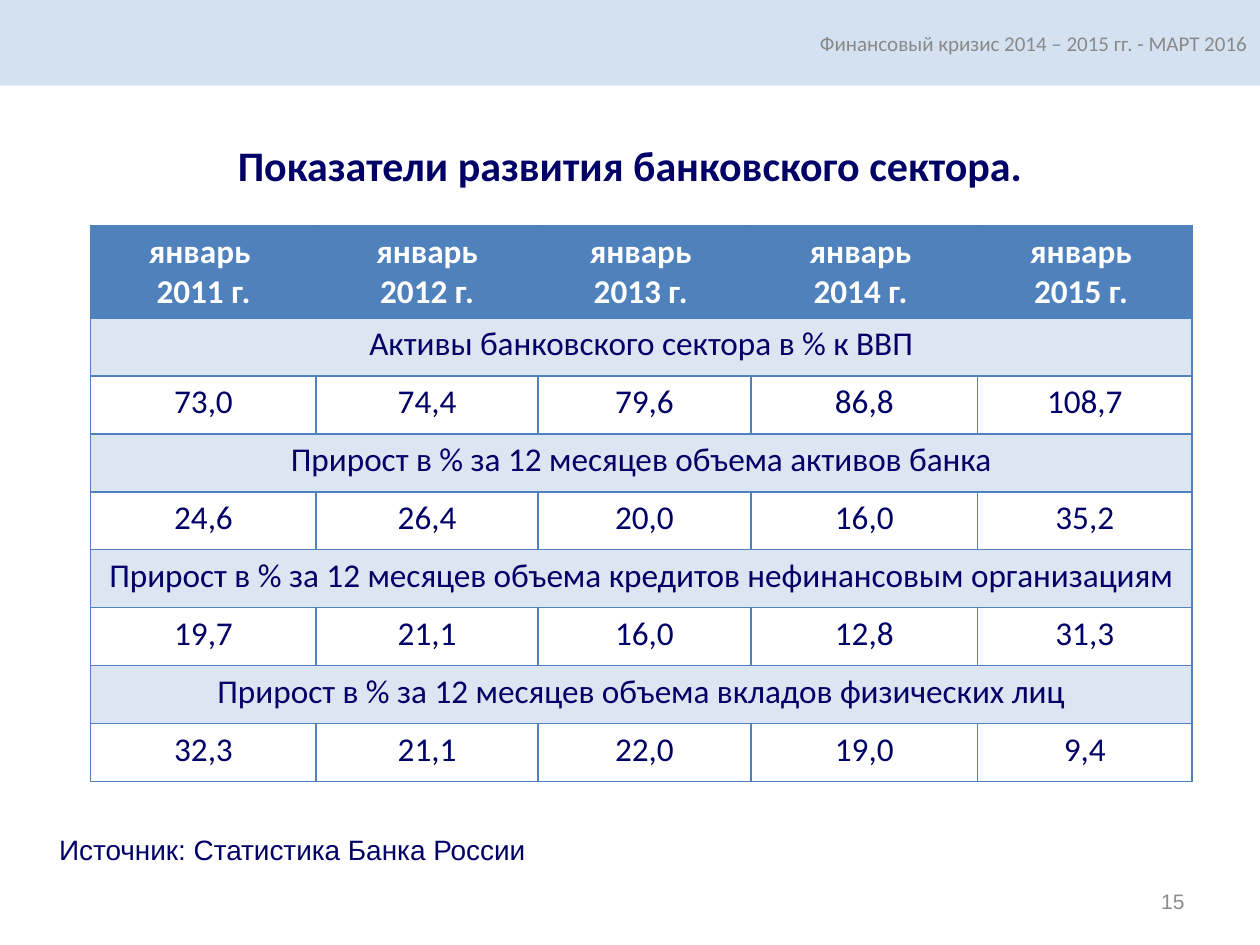
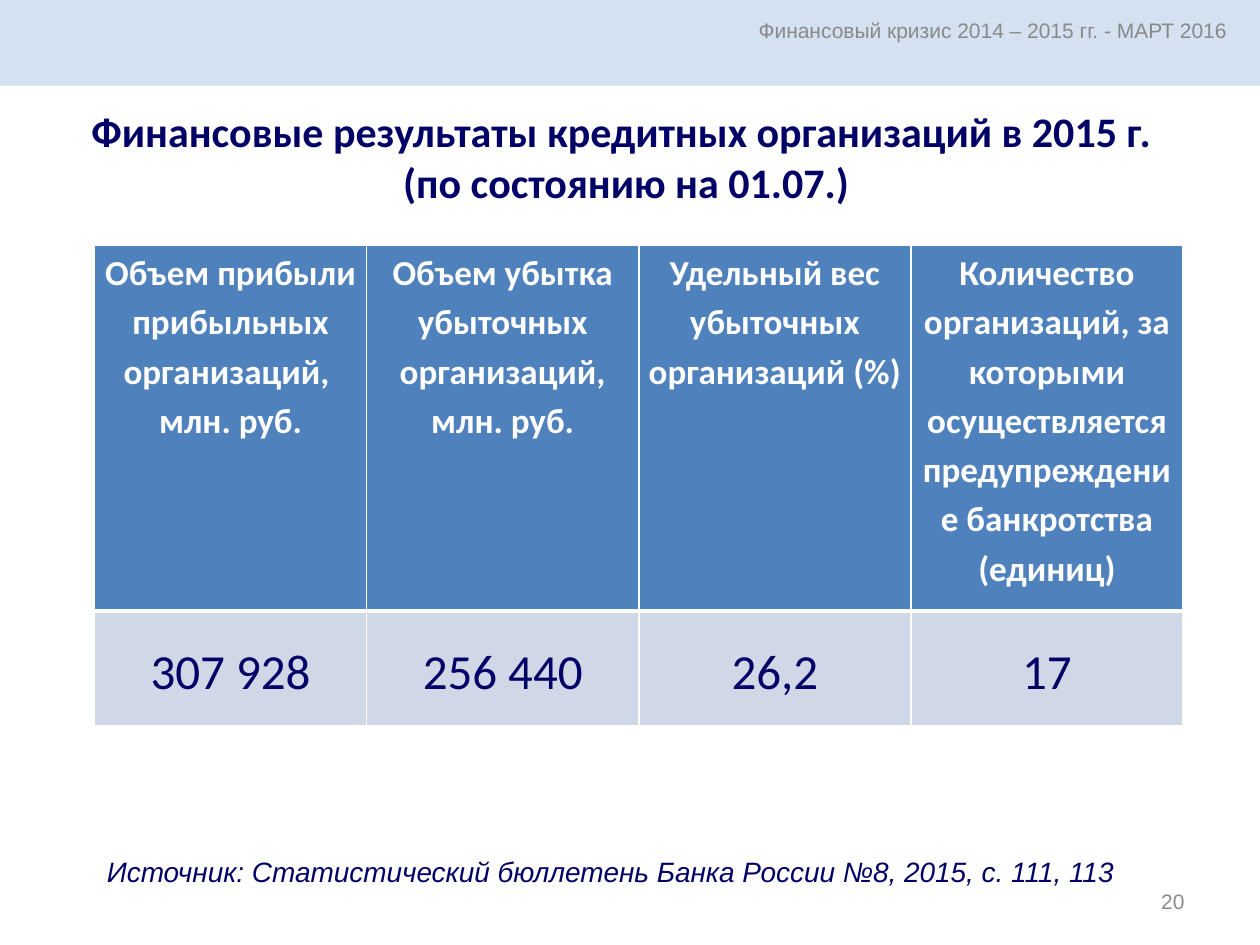
import pptx
import pptx.util
import pptx.oxml
import pptx.oxml.ns
from pptx.dml.color import RGBColor
from pptx.enum.shapes import MSO_SHAPE
from pptx.enum.text import MSO_ANCHOR, PP_ALIGN

PX = 9144  # EMU in one px, 100 px to the inch
WIDTH, HEIGHT = 1000, 750

NAVY = RGBColor(0x00, 0x00, 0x66)
BLUE = RGBColor(0x4F, 0x81, 0xBD)
PALE_BLUE = RGBColor(0xDC, 0xE6, 0xF2)
GREY_BLUE = RGBColor(0xD0, 0xD8, 0xE8)
BAND = RGBColor(0xD4, 0xE1, 0xF0)
GREY = RGBColor(0x89, 0x89, 0x89)
PAGE_GREY = RGBColor(0x8C, 0x8C, 0x8C)
WHITE = RGBColor(0xFF, 0xFF, 0xFF)

RUNNING_HEAD = "Финансовый кризис 2014 – 2015 гг. - МАРТ 2016"


def px(n):
    return pptx.util.Emu(n * PX)


def write(tf, text, size=16, font="Arial", color=NAVY, bold=False, italic=False,
          align=PP_ALIGN.LEFT, spacing=None):
    """Fill a text frame, one paragraph for each line of text."""
    for i, line in enumerate(text.split("\n")):
        p = tf.add_paragraph() if i else tf.paragraphs[0]
        p.alignment = align
        if spacing:
            p.line_spacing = spacing
        r = p.add_run()
        r.text = line
        r.font.size = pptx.util.Pt(size)
        r.font.name = font
        r.font.color.rgb = color
        r.font.bold = bold
        r.font.italic = italic


def set_borders(cell, color, **widths):
    """Draw cell borders; widths in points are keyed by side L, R, T, B."""
    tc_pr = cell._tc.get_or_add_tcPr()
    for i, side in enumerate("LRTB"):
        width = pptx.util.Pt(widths.get(side, 1))
        ln = pptx.oxml.parse_xml(
            f'<a:ln{side} {pptx.oxml.ns.nsdecls("a")} w="{width}"><a:solidFill>'
            f'<a:srgbClr val="{color}"/></a:solidFill></a:ln{side}>')
        tc_pr.insert(i, ln)


class Deck:
    def __init__(self):
        self.prs = pptx.Presentation()
        self.prs.slide_width, self.prs.slide_height = px(WIDTH), px(HEIGHT)
        self.s = None

    def slide(self, number):
        self.s = self.prs.slides.add_slide(self.prs.slide_layouts[6])
        self.text(717, 695, 233, 40, str(number), size=12, color=PAGE_GREY,
                  align=PP_ALIGN.RIGHT, anchor=MSO_ANCHOR.MIDDLE)

    def band(self):
        sp = self.s.shapes.add_shape(MSO_SHAPE.RECTANGLE, 0, 0, px(WIDTH), px(68))
        sp.shadow.inherit = False
        sp.fill.solid()
        sp.fill.fore_color.rgb = BAND
        sp.line.fill.background()
        sp.text_frame.vertical_anchor = MSO_ANCHOR.MIDDLE
        return sp.text_frame

    def text(self, x, y, w, h, text, anchor=MSO_ANCHOR.TOP, bottom=5, **style):
        tf = self.s.shapes.add_textbox(px(x), px(y), px(w), px(h)).text_frame
        tf.word_wrap = True
        tf.vertical_anchor = anchor
        tf.margin_bottom = px(bottom)
        write(tf, text, **style)

    def title(self, x, y, h, text, **place):
        self.text(x, y, WIDTH, h, text, size=24, font="Calibri", bold=True,
                  align=PP_ALIGN.CENTER, **place)

    def table(self, x, y, cols, rows):
        shape = self.s.shapes.add_table(len(rows), len(cols), px(x), px(y),
                                        px(sum(cols)), px(sum(rows)))
        table = shape.table
        table.first_row = table.horz_banding = False
        for col, width in zip(table.columns, cols):
            col.width = px(width)
        for row, height in zip(table.rows, rows):
            row.height = px(height)
        return table

    def cell(self, cell, text, fill=None, **style):
        if fill is None:
            cell.fill.background()
        else:
            cell.fill.solid()
            cell.fill.fore_color.rgb = fill
        write(cell.text_frame, text, font="Calibri", align=PP_ALIGN.CENTER, **style)


def sector_slide(deck):
    deck.slide(15)
    deck.title(0, 57, 107, "Показатели развития банковского сектора.",
               anchor=MSO_ANCHOR.BOTTOM, bottom=13)
    write(deck.band(), RUNNING_HEAD, size=12, font="Calibri", color=GREY,
          align=PP_ALIGN.RIGHT)
    deck.text(37, 656, 831, 37, "Источник: Статистика Банка России",
              align=PP_ALIGN.JUSTIFY)

    # Table: each indicator is a merged heading over its yearly values
    years = ["январь \n2011 г.", " январь \n2012 г.", "январь \n2013 г. ",
             "январь \n2014 г. ", "январь \n2015 г. "]
    indicators = [
        ("Активы банковского сектора в % к ВВП",
         ["73,0", "74,4", "79,6", "86,8", "108,7"]),
        ("Прирост в % за 12 месяцев объема активов банка",
         ["24,6", "26,4", "20,0", "16,0", "35,2"]),
        ("Прирост в % за 12 месяцев объема кредитов нефинансовым организациям",
         ["19,7", "21,1", "16,0", "12,8", "31,3"]),
        ("Прирост в % за 12 месяцев объема вкладов физических лиц",
         ["32,3", "21,1", "22,0", "19,0", "9,4"]),
    ]
    table = deck.table(72, 179, [179, 176, 169, 180, 170],
                       [72] + [46] * 2 * len(indicators))
    for c, year in enumerate(years):
        deck.cell(table.cell(0, c), year, BLUE, size=19, color=WHITE, bold=True)
    for i, (heading, values) in enumerate(indicators):
        r = 1 + 2 * i
        table.cell(r, 0).merge(table.cell(r, len(years) - 1))
        deck.cell(table.cell(r, 0), heading, PALE_BLUE, size=19)
        for c, value in enumerate(values):
            deck.cell(table.cell(r + 1, c), value, size=19)
    for cell in table.iter_cells():
        set_borders(cell, BLUE)


def results_slide(deck):
    deck.slide(20)
    deck.band()
    deck.text(369, 9, 615, 50, RUNNING_HEAD, size=12, color=GREY, align=PP_ALIGN.RIGHT)
    deck.title(-3, 79, 91, "Финансовые результаты кредитных организаций в 2015 г. \n"
                           "(по состоянию на 01.07.)")
    deck.text(75, 673, 840, 37, italic=True, text="Источник: Статистический бюллетень "
              "Банка России №8, 2015, с. 111, 113")

    # Table: one value under each heading
    results = [
        ("Объем прибыли прибыльных организаций, \nмлн. руб.", "307 928"),
        ("Объем убытка убыточных организаций,\nмлн. руб.", "256 440"),
        ("Удельный вес убыточных организаций (%)", "26,2"),
        ("Количество организаций, за которыми осуществляется "
         "предупреждение банкротства (единиц)", "17"),
    ]
    table = deck.table(75, 195, [216] * len(results), [290, 91])
    for c, (heading, value) in enumerate(results):
        head, body = table.cell(0, c), table.cell(1, c)
        deck.cell(head, heading, BLUE, size=20, color=WHITE, bold=True, spacing=1.15)
        deck.cell(body, value, GREY_BLUE, size=28, spacing=1.15)
        body.vertical_anchor = MSO_ANCHOR.MIDDLE
        set_borders(head, WHITE, B=3)
        set_borders(body, WHITE, T=3)
    for cell in table.iter_cells():
        cell.margin_left = cell.margin_right = px(7)
        cell.margin_top = cell.margin_bottom = 0


def main():
    deck = Deck()
    sector_slide(deck)
    results_slide(deck)
    deck.prs.save("out.pptx")


if __name__ == "__main__":
    main()
